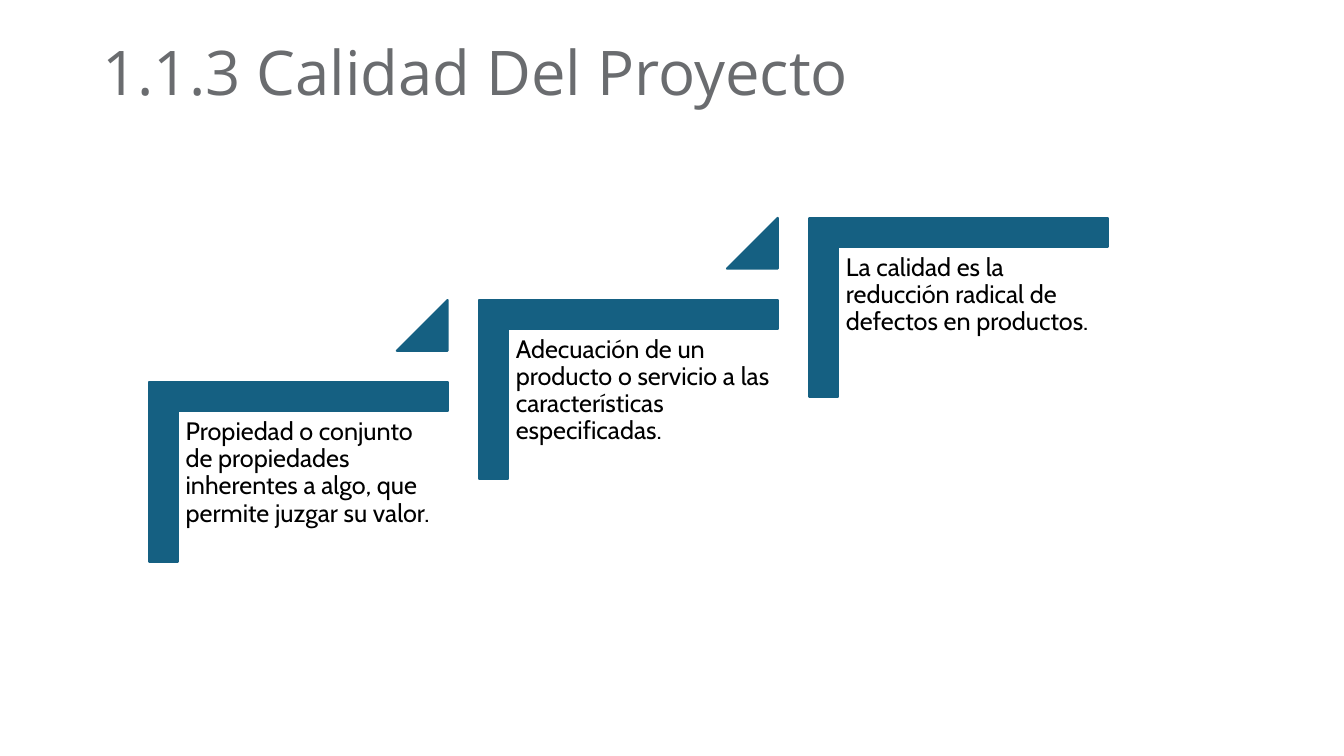
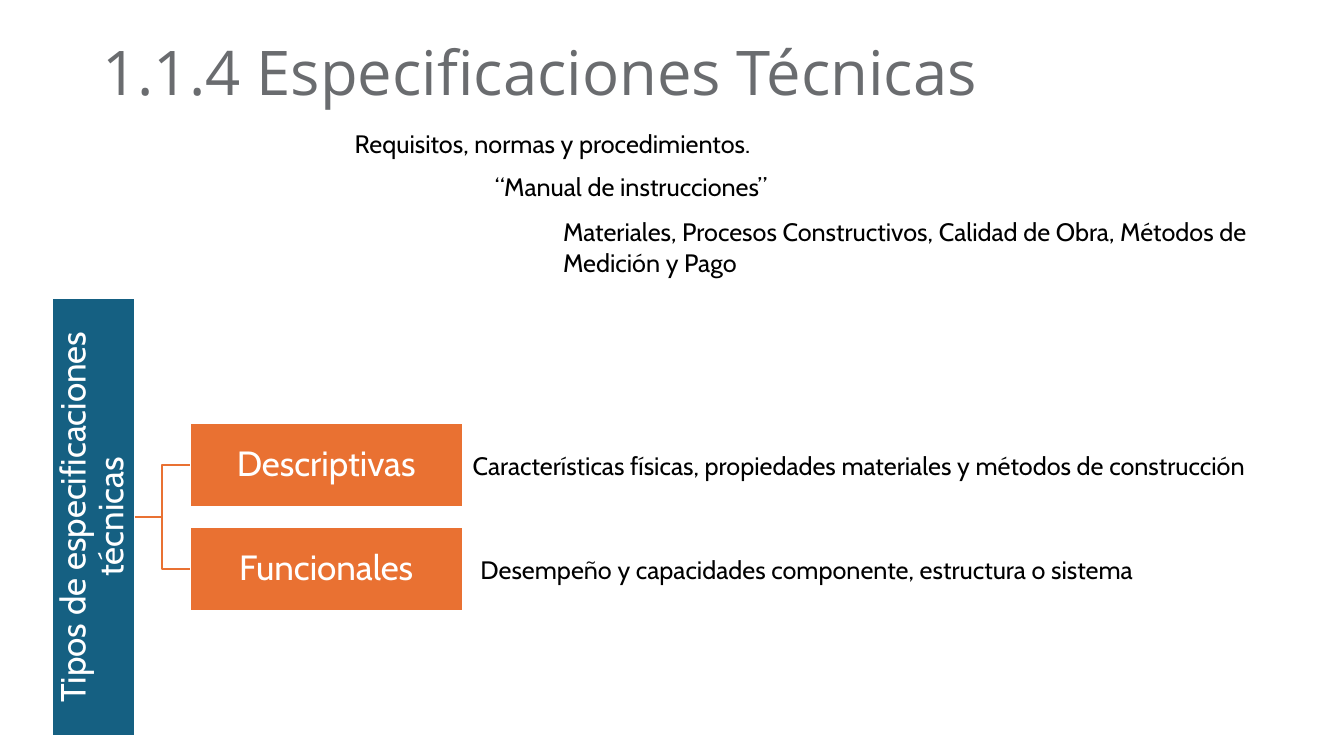
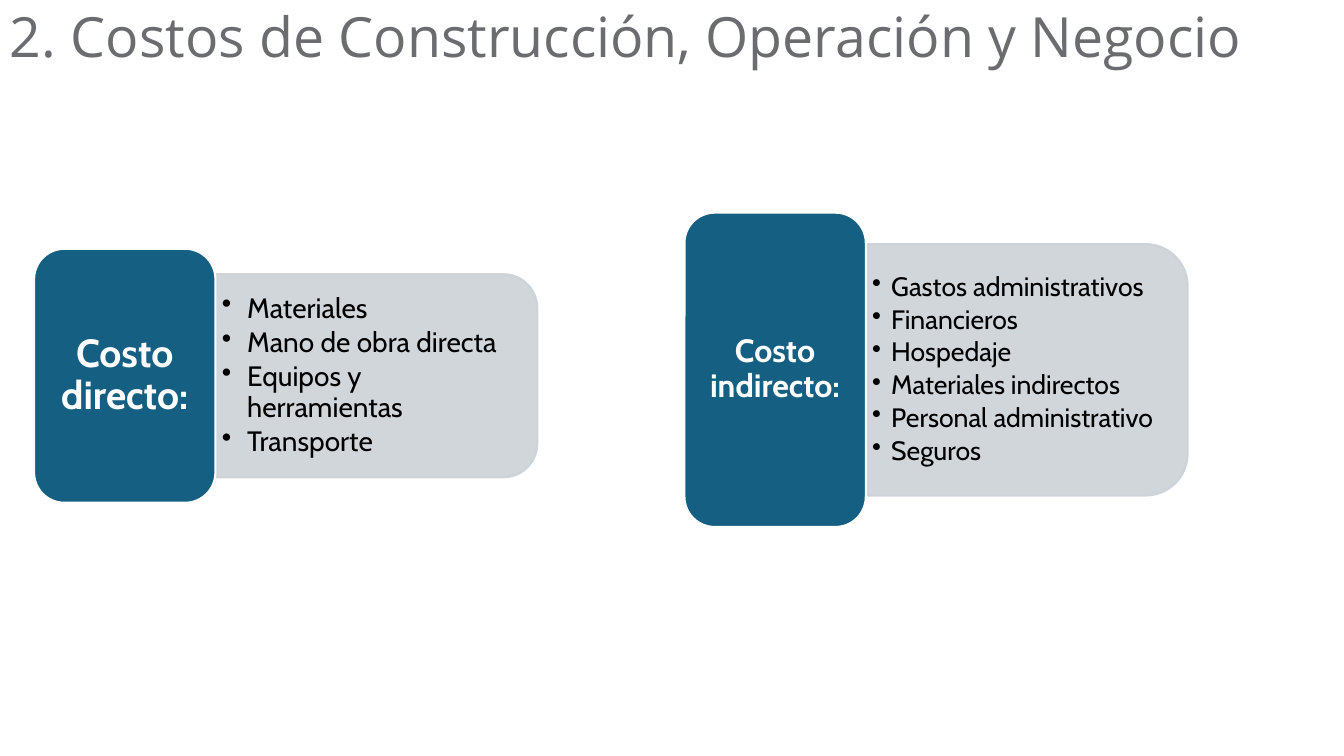
from pptx import Presentation
from pptx.dml.color import RGBColor
from pptx.enum.shapes import MSO_CONNECTOR, MSO_SHAPE
from pptx.enum.text import MSO_ANCHOR, PP_ALIGN
from pptx.oxml.ns import qn
from pptx.util import Cm, Pt
from lxml import etree

CORNER, TRIANGLE = MSO_SHAPE.CORNER, MSO_SHAPE.ISOSCELES_TRIANGLE
RECT, ROUNDED = MSO_SHAPE.RECTANGLE, MSO_SHAPE.ROUNDED_RECTANGLE
ROUND_TOP = MSO_SHAPE.ROUND_2_SAME_RECTANGLE
ELBOW = MSO_CONNECTOR.ELBOW
TOP, MIDDLE = MSO_ANCHOR.TOP, MSO_ANCHOR.MIDDLE
LEFT, CENTER = PP_ALIGN.LEFT, PP_ALIGN.CENTER

BLUE, ORANGE, PANEL = "156082", "E97132", "CCD2D8"
BLACK, WHITE, GREY = "000000", "FFFFFF", "6A6C6F"
TITLE_FONT, BODY_FONT = "Open Sans", "Cabin"
SLIDE_W, SLIDE_H = 33.87, 19.05
TITLE_BOX = (2.33, 1.02, 29.21, 3.68)
LINE_W = Pt(1.5)
BOX_INSETS = (0.25, 0.13)

QUALITY_TITLE = "1.1.3 Calidad Del Proyecto"
QUALITY_STEPS = [
    "Propiedad o conjunto de propiedades inherentes a algo, que permite juzgar su valor.",
    "Adecuación de un producto o servicio a las características especificadas.",
    "La calidad es la reducción radical de defectos en productos.",
]

SPECS_TITLE = "1.1.4 Especificaciones Técnicas"
SPECS_ROOT = "Tipos de especificaciones técnicas"
SPECS_TYPES = ["Descriptivas", "Funcionales"]
SPECS_NOTES = [  # text, left, top, width, height
    ("Requisitos, normas y procedimientos.", 8.69, 3.1, 11.61, 1.02),
    ("“Manual de instrucciones”", 12.22, 4.19, 11.61, 1.02),
    ("Materiales, Procesos Constructivos, Calidad de Obra, Métodos de Medición y Pago",
     13.94, 5.33, 19.05, 1.8),
    ("Características físicas, propiedades materiales y métodos de construcción",
     11.66, 11.23, 21.34, 1.02),
    ("Desempeño y capacidades componente, estructura o sistema",
     11.86, 13.84, 21.34, 1.02),
]

COSTS_TITLE = "2. Costos de Construcción, Operación y Negocio"
COSTS = [
    dict(name="Costo directo:", left=0.86, middle=9.47, height=6.4,
         name_size=28, item_size=20, indent=0.64, insets=(0.3, 0.15),
         items=["Materiales", "Mano de obra directa", "Equipos y herramientas",
                "Transporte"]),
    dict(name="Costo indirecto:", left=17.25, middle=9.32, height=7.92,
         name_size=23, item_size=19, indent=0.48, insets=(0.25, 0.13),
         items=["Gastos administrativos", "Financieros", "Hospedaje",
                "Materiales indirectos", "Personal administrativo", "Seguros"]),
]


def rgb(value):
    return RGBColor.from_string(value)


def add_block(s, kind, x, y, w, h, fill, line, quarter_turn=False):
    """Add a shape that covers the given area, also when it is turned by 90 degrees."""
    if quarter_turn:
        x, y, w, h = x + (w - h) / 2, y + (h - w) / 2, h, w
    sp = s.shapes.add_shape(kind, Cm(x), Cm(y), Cm(w), Cm(h))
    sp.rotation = 90 if quarter_turn else 0
    sp.shadow.inherit = False
    sp.fill.solid()
    sp.fill.fore_color.rgb = rgb(fill)
    sp.line.color.rgb = rgb(line)
    sp.line.width = LINE_W
    return sp


def add_box(s, x, y, w, h):
    return s.shapes.add_textbox(Cm(x), Cm(y), Cm(w), Cm(h))


def write(sp, lines, size, color=BLACK, font=BODY_FONT, bold=False, align=LEFT,
          anchor=TOP, insets=BOX_INSETS, spacing=0.9, indent=0):
    """Fill a shape with one paragraph per line; an indent makes them bullets."""
    tf = sp.text_frame
    tf.word_wrap = True
    tf.vertical_anchor = anchor
    tf.margin_left = tf.margin_right = Cm(insets[0])
    tf.margin_top = tf.margin_bottom = Cm(insets[1])
    for i, line in enumerate(lines):
        p = tf.paragraphs[0] if i == 0 else tf.add_paragraph()
        p.alignment = align
        p.line_spacing = spacing
        if indent:
            p.space_after = Pt(3)
            pPr = p._p.get_or_add_pPr()
            pPr.set("marL", str(Cm(indent)))
            pPr.set("indent", str(-Cm(indent)))
            etree.SubElement(pPr, qn("a:buChar")).set("char", "•")
        r = p.add_run()
        r.text = line
        r.font.name = font
        r.font.size = Pt(size)
        r.font.bold = bold
        r.font.color.rgb = rgb(color)
    return tf


def set_alpha(sp, percent):
    for clr in sp._element.spPr.iter(qn("a:srgbClr")):
        etree.SubElement(clr, qn("a:alpha")).set("val", str(percent * 1000))


def add_slide(prs, title, size=44, box=TITLE_BOX):
    s = prs.slides.add_slide(prs.slide_layouts[6])
    tf = write(add_box(s, *box), [title], size, GREY, TITLE_FONT,
               anchor=MIDDLE, insets=(0.25, 0))
    tf.margin_bottom = Pt(size * 1.225)  # keeps room for a second title line
    return s


def join(s, parent, child):
    """Link the right side of parent to the left side of child."""
    c = s.shapes.add_connector(ELBOW, 0, 0, 0, 0)
    c.begin_connect(parent, 3)
    c.end_connect(child, 1)
    c.line.color.rgb = rgb(ORANGE)
    c.line.width = LINE_W
    etree.SubElement(c._element.spPr, qn("a:effectLst"))


def build_quality(prs):
    s = add_slide(prs, QUALITY_TITLE)
    corner_w, corner_h, triangle, text_gap = 7.52, 4.52, 1.28, 0.74
    step_x, step_y = 8.32, 2.07
    for i, text in enumerate(QUALITY_STEPS):
        x, y = 3.76 + i * step_x, 9.63 - i * step_y
        corner = add_block(s, CORNER, x, y, corner_w, corner_h, BLUE, BLUE, True)
        corner.adjustments[0] = corner.adjustments[1] = 0.16
        write(add_box(s, x + text_gap, y + text_gap, 6.81, 5.97), [text], 18,
              insets=(0.18, 0.18))
        if i < len(QUALITY_STEPS) - 1:
            arrow = add_block(s, TRIANGLE, x + corner_w - triangle, y - step_y,
                              triangle, triangle, BLUE, BLUE)
            arrow.adjustments[0] = 1


def build_specs(prs):
    s = add_slide(prs, SPECS_TITLE)
    top, box_h, pitch, bar_h = 10.67, 2.1, 2.62, 11.05
    style = dict(size=25, color=WHITE, align=CENTER, anchor=MIDDLE, insets=(0.05, 0.05))
    middle = top + (pitch * (len(SPECS_TYPES) - 1) + box_h) / 2
    bar = add_block(s, RECT, 1.3, middle - bar_h / 2, box_h, bar_h, BLUE, WHITE)
    tf = write(bar, [SPECS_ROOT], **style)
    tf._txBody.bodyPr.set("vert", "vert270")
    for i, name in enumerate(SPECS_TYPES):
        box = add_block(s, RECT, 4.78, top + i * pitch, 6.88, box_h, ORANGE, WHITE)
        write(box, [name], **style)
        join(s, bar, box)
    for text, *area in SPECS_NOTES:
        write(add_box(s, *area), [text], 18, spacing=1)


def build_costs(prs):
    s = add_slide(prs, COSTS_TITLE, 39.6, (0, 0, SLIDE_W, 3.68))
    name_w, panel_w, text_w = 4.57, 8.15, 7.88
    for cost in COSTS:
        x, middle, name_h = cost["left"], cost["middle"], cost["height"]
        panel_x, panel_h = x + name_w - 0.04, name_h * 0.8
        text_h = panel_h * 0.9
        panel = add_block(s, ROUND_TOP, panel_x, middle - panel_h / 2,
                          panel_w, panel_h, PANEL, PANEL, True)
        set_alpha(panel, 90)
        write(add_box(s, panel_x, middle - text_h / 2, text_w, text_h), cost["items"],
              cost["item_size"], anchor=MIDDLE, insets=(0.2, 0.1), indent=cost["indent"])
        card = add_block(s, ROUNDED, x, middle - name_h / 2, name_w, name_h, BLUE, WHITE)
        write(card, [cost["name"]], cost["name_size"], WHITE, bold=True, align=CENTER,
              anchor=MIDDLE, insets=cost["insets"])


def main():
    prs = Presentation()
    prs.slide_width, prs.slide_height = Cm(SLIDE_W), Cm(SLIDE_H)
    build_quality(prs)
    build_specs(prs)
    build_costs(prs)
    prs.save("out.pptx")


if __name__ == "__main__":
    main()
